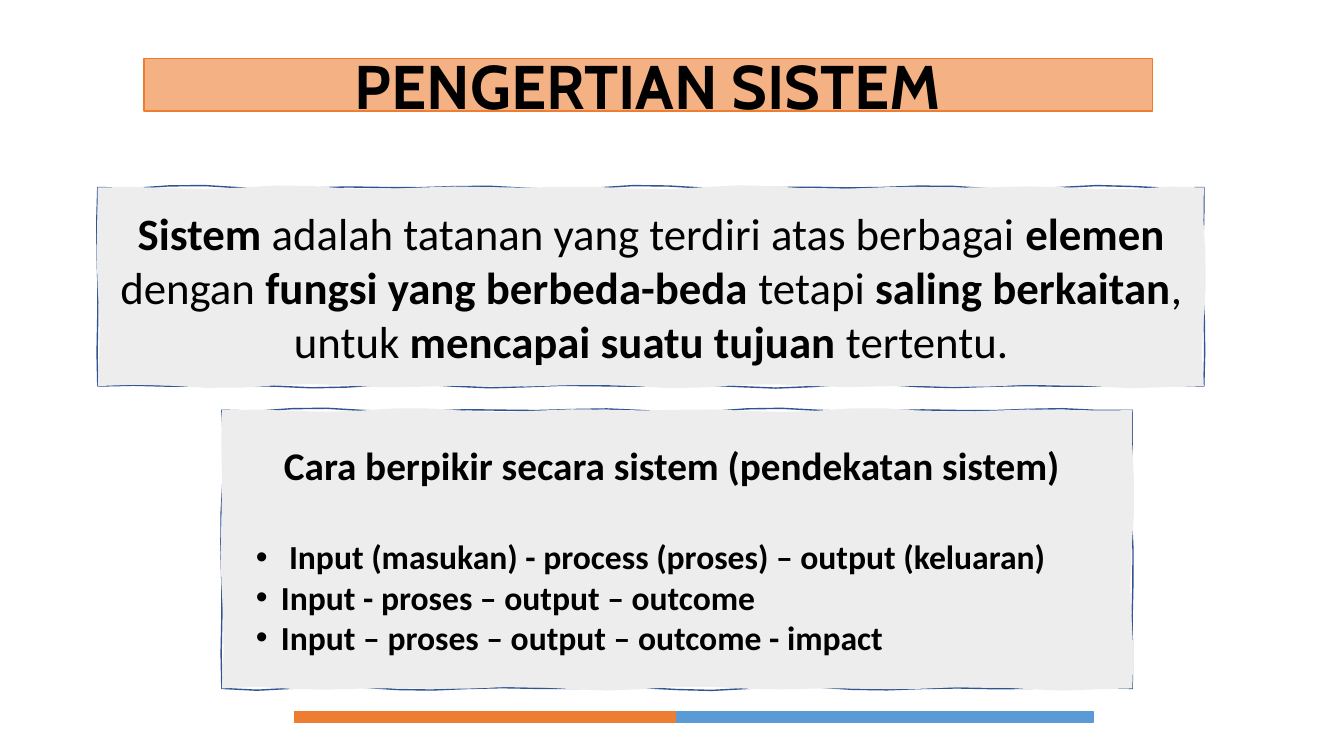
from math import pi, sin

from lxml.etree import SubElement
from pptx import Presentation
from pptx.dml.color import RGBColor
from pptx.enum.shapes import MSO_SHAPE as Shape
from pptx.enum.text import MSO_ANCHOR as Anchor, MSO_AUTO_SIZE as Fit, PP_ALIGN as Align
from pptx.oxml.ns import qn
from pptx.util import Inches, Pt

COLORS = {
    "text": "000000", "title": "F4B183", "orange": "ED7D31",
    "blue": "5B9BD5", "paper": "EDEDED", "ink": "325491",
}
MEANING = [
    ("Sistem ", True), ("adalah tatanan yang terdiri atas berbagai ", False),
    ("elemen ", True), ("dengan ", False),
    ("fungsi yang berbeda-beda ", True), ("tetapi ", False),
    ("saling berkaitan", True), (", untuk ", False),
    ("mencapai suatu tujuan ", True), ("tertentu.", False),
]
HEADING = "Cara berpikir secara sistem (pendekatan sistem)"
FLOWS = [
    "Input (masukan) - process (proses) – output (keluaran)",
    "Input - proses – output – outcome",
    "Input – proses – output – outcome - impact",
]


def color(name):
    return RGBColor.from_string(COLORS[name])


def paint(shape, fill=None, line=None):
    """Give a shape a fill and a line; None means without."""
    if fill:
        shape.fill.solid()
        shape.fill.fore_color.rgb = color(fill)
    else:
        shape.fill.background()
    if line:
        shape.line.color.rgb = color(line)
        shape.line.width = Pt(1)
    else:
        shape.line.fill.background()


def style(para, size, bold=None, face="Calibri", align=Align.LEFT):
    para.alignment = align
    font = para.font
    font.name, font.size, font.bold = face, Pt(size), bold
    font.color.rgb = color("text")


def bullet(para, left, hang):
    """Indent a paragraph by left inches, with a bullet hung before it."""
    props = para._p.get_or_add_pPr()
    props.set("marL", str(Inches(left)))
    props.set("indent", str(-Inches(hang)))
    SubElement(props, qn("a:buFont"), typeface="Arial")
    SubElement(props, qn("a:buChar"), char="•")


def wavy(x, y, width, height, phase):
    """List the points of a rectangle with hand-drawn edges."""
    ends = [(x, y), (x + width, y), (x + width, y + height), (x, y + height)]
    points = []
    for side, (ax, ay) in enumerate(ends):
        bx, by = ends[(side + 1) % 4]
        size = abs(bx - ax) + abs(by - ay)
        count = round(size / 0.35)
        for step in range(count):
            far = size * step / count
            shift = 0
            if step:
                shift = (0.012 * sin(2 * pi * far / 1.5 + phase + side)
                         + 0.01 * sin(2 * pi * far / 2.3 + 2 * phase))
            dx, dy = (0, shift) if side % 2 == 0 else (shift, 0)
            points.append((ax + (bx - ax) * step / count + dx,
                           ay + (by - ay) * step / count + dy))
    return points


def outline(slide, points, fill=None, line=None):
    (x, y), *rest = [(Inches(px), Inches(py)) for px, py in points]
    pen = slide.shapes.build_freeform(x, y)
    pen.add_line_segments(rest, close=True)
    shape = pen.convert_to_shape()
    shape.shadow.inherit = False
    paint(shape, fill, line)
    return shape


def sketch(slide, x, y, width, height):
    """Draw a sketched box and return its text frame."""
    outline(slide, wavy(x, y, width, height, 1), line="ink")
    frame = outline(slide, wavy(x, y, width, height, 3), fill="paper").text_frame
    frame.word_wrap = True
    frame.vertical_anchor = Anchor.MIDDLE
    return frame


def add_title(slide):
    title = slide.shapes.title
    title.left, title.top = Inches(1.43), Inches(0.58)
    title.width, title.height = Inches(10), Inches(0.52)
    paint(title, "title", "orange")
    frame = title.text_frame
    frame.text = "PENGERTIAN SISTEM"
    frame.auto_size = Fit.NONE
    frame.vertical_anchor = Anchor.MIDDLE
    style(frame.paragraphs[0], 44, True, "Cabin", Align.CENTER)


def add_meaning(slide):
    para = sketch(slide, 0.97, 1.86, 10.97, 1.97).paragraphs[0]
    style(para, 32, align=Align.CENTER)
    for text, bold in MEANING:
        run = para.add_run()
        run.text = text
        run.font.bold = bold


def add_flows(slide):
    frame = sketch(slide, 2.2, 4.07, 9.03, 2.76)
    head = frame.paragraphs[0]
    head.text = HEADING
    head._p.get_or_add_pPr().set("marL", str(Inches(0.53)))
    style(head, 28, True)
    for index, text in enumerate(FLOWS):
        para = frame.add_paragraph()
        para.text = text
        extra = 0 if index else 0.08
        if index == 0:
            para.space_before = Pt(34)
        bullet(para, 0.5 + extra, 0.25 + extra)
        style(para, 24, True)


def add_bars(slide):
    group = slide.shapes.add_group_shape()
    for left, name in ((2.92, "orange"), (6.71, "blue")):
        bar = group.shapes.add_shape(
            Shape.RECTANGLE, Inches(left), Inches(7.06), Inches(4.13), Inches(0.11))
        bar.shadow.inherit = False
        paint(bar, name, name)


def main():
    deck = Presentation()
    deck.slide_width, deck.slide_height = Inches(13.33), Inches(7.5)
    slide = deck.slides.add_slide(deck.slide_layouts[5])
    add_title(slide)
    add_meaning(slide)
    add_flows(slide)
    add_bars(slide)
    deck.save("out.pptx")


if __name__ == "__main__":
    main()
